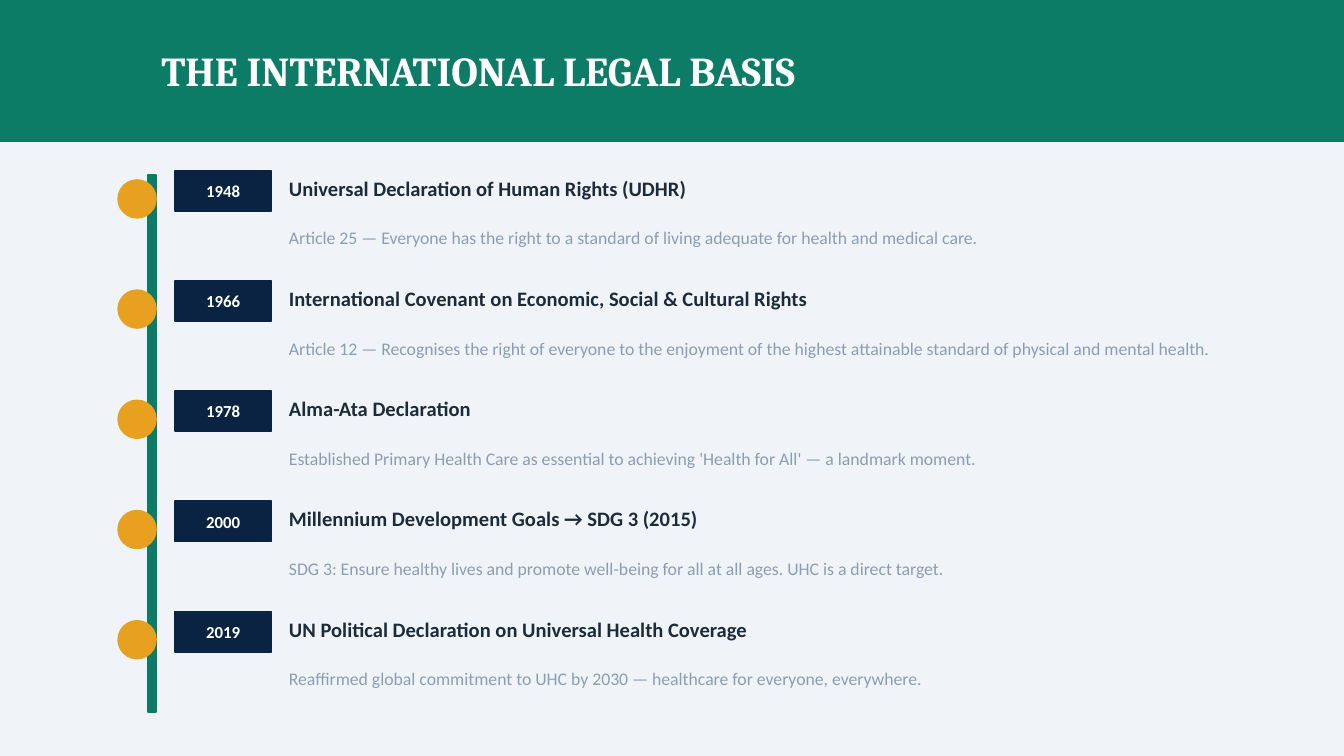
from pptx import Presentation
from pptx.dml.color import RGBColor
from pptx.enum.shapes import MSO_SHAPE
from pptx.enum.text import MSO_ANCHOR, MSO_AUTO_SIZE, PP_ALIGN
from pptx.util import Inches, Pt

GREEN, AMBER, NAVY = "0D7C66", "E8A020", "0A2342"
WHITE, INK, GREY, PALE = "FFFFFF", "1C2B3A", "8B9DB5", "F0F4F8"

EVENTS = [
    ("1948", "Universal Declaration of Human Rights (UDHR)",
     "Article 25 — Everyone has the right to a standard of living adequate for health and medical care."),
    ("1966", "International Covenant on Economic, Social & Cultural Rights",
     "Article 12 — Recognises the right of everyone to the enjoyment of the highest attainable "
     "standard of physical and mental health."),
    ("1978", "Alma-Ata Declaration",
     "Established Primary Health Care as essential to achieving 'Health for All' — a landmark moment."),
    ("2000", "Millennium Development Goals → SDG 3 (2015)",
     "SDG 3: Ensure healthy lives and promote well-being for all at all ages. UHC is a direct target."),
    ("2019", "UN Political Declaration on Universal Health Coverage",
     "Reaffirmed global commitment to UHC by 2030 — healthcare for everyone, everywhere."),
]
FIRST_TOP, ROW_STEP = 1.26, 0.82

# Widescreen page, 16:9
deck = Presentation()
deck.slide_width, deck.slide_height = Inches(10), Inches(10 * 9 / 16)
page = deck.slides.add_slide(deck.slide_layouts[5])
page.background.fill.solid()
page.background.fill.fore_color.rgb = RGBColor.from_string(PALE)


def add_block(kind, left, top, width, height, color):
    block = page.shapes.add_shape(kind, Inches(left), Inches(top), Inches(width), Inches(height))
    block.shadow.inherit = False
    block.fill.solid()
    block.fill.fore_color.rgb = RGBColor.from_string(color)
    block.line.color.rgb = RGBColor.from_string(color)
    block.line.width = Pt(1)
    return block


def write(box, text, size, color, bold=False, align=PP_ALIGN.LEFT, font="Calibri", inset=0):
    frame = box.text_frame
    frame.word_wrap = True
    frame.auto_size = MSO_AUTO_SIZE.NONE
    frame.vertical_anchor = MSO_ANCHOR.MIDDLE
    frame.margin_left = frame.margin_right = Inches(inset)
    frame.margin_top = frame.margin_bottom = Inches(inset / 2)
    para = frame.paragraphs[0]
    para.text = text
    para.alignment = align
    para.font.name = font
    para.font.size = Pt(size)
    para.font.bold = bold
    para.font.color.rgb = RGBColor.from_string(color)


# Header band, placed behind the title
band = add_block(MSO_SHAPE.RECTANGLE, 0, 0, 10, 1.05, GREEN)
title = page.shapes.title
title.element.addprevious(band.element)
title.left, title.top, title.width, title.height = Inches(1.1), Inches(0), Inches(8.5), Inches(1.05)
write(title, "THE INTERNATIONAL LEGAL BASIS", 22, WHITE, bold=True, font="Cambria", inset=0.1)

# Timeline bar
add_block(MSO_SHAPE.RECTANGLE, 1.1, 1.3, 0.06, 4, GREEN)

# One row per event: dot, year, heading, description
for row, (year, heading, description) in enumerate(EVENTS):
    top = FIRST_TOP + row * ROW_STEP
    add_block(MSO_SHAPE.OVAL, 0.88, top + 0.08, 0.28, 0.28, AMBER)
    year_box = add_block(MSO_SHAPE.RECTANGLE, 1.3, top + 0.01, 0.72, 0.3, NAVY)
    write(year_box, year, 9, WHITE, bold=True, align=PP_ALIGN.CENTER)
    heading_box = page.shapes.add_textbox(Inches(2.15), Inches(top), Inches(7.6), Inches(0.28))
    write(heading_box, heading, 11, INK, bold=True)
    description_box = page.shapes.add_textbox(Inches(2.15), Inches(top + 0.32), Inches(7.6), Inches(0.38))
    write(description_box, description, 9.5, GREY)

deck.save("out.pptx")
